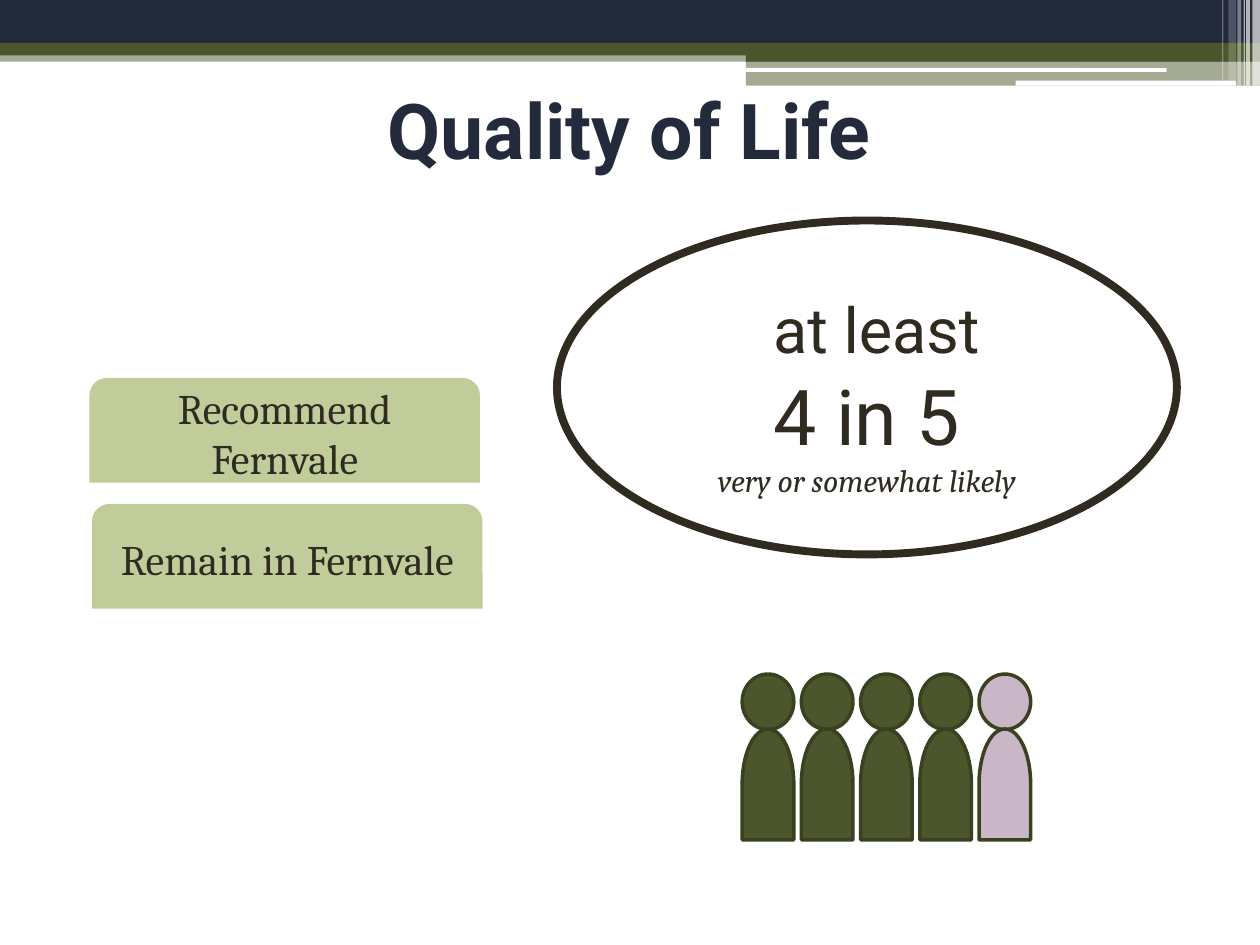
"""Build the Quality of Life slide with its likelihood callout and five-person pictogram."""
from lxml import etree
from pptx import Presentation, util as u
from pptx.dml.color import RGBColor
from pptx.enum import shapes, text
from pptx.oxml import ns

NAVY = RGBColor(0x22, 0x2A, 0x3C)
OLIVE = RGBColor(0x4C, 0x56, 0x2C)
DARK_OLIVE = RGBColor(0x39, 0x41, 0x21)
SAGE = RGBColor(0xC0, 0xCC, 0x9A)
MAUVE = RGBColor(0xC9, 0xB6, 0xC7)
INK = RGBColor(0x2F, 0x2B, 0x20)
WHITE = RGBColor(0xFF, 0xFF, 0xFF)
KIND = shapes.MSO_SHAPE

presentation = Presentation()
presentation.slide_width, presentation.slide_height = u.Inches(10), u.Inches(7.5)
COLUMN = presentation.slide_width / 10
ROW = presentation.slide_height / 7.5
slide = presentation.slides.add_slide(presentation.slide_layouts[5])


def add_figure(parent, kind, left, top, width, height, fill=None, opacity=100, line=None, weight=2):
    shape = parent.shapes.add_shape(
        kind, round(left * COLUMN), round(top * ROW), round(width * COLUMN), round(height * ROW))
    shape.shadow.inherit = False
    if fill is None:
        shape.fill.background()
    else:
        shape.fill.solid()
        shape.fill.fore_color.rgb = fill
        if opacity < 100:
            color = shape.fill._xPr.find(".//" + ns.qn("a:srgbClr"))
            etree.SubElement(color, ns.qn("a:alpha"), val=str(opacity * 1000))
    if line is None:
        shape.line.fill.background()
    else:
        shape.line.color.rgb = line
        shape.line.width = u.Pt(weight)
    return shape


def write(paragraph, words, size, font="Roboto", color=INK, bold=False, italic=False):
    paragraph.alignment = text.PP_ALIGN.CENTER
    run = paragraph.add_run()
    run.text = words
    run.font.size, run.font.name = u.Pt(size), font
    run.font.bold, run.font.italic = bold, italic
    run.font.color.rgb = color


for left, top, width, height, color, opacity in (
    (0, 0.4, 10, 0.09, OLIVE, 50),
    (0, 0, 10, 0.34, NAVY, 100),
    (0, 0.34, 10, 0.1, OLIVE, 100),
    (5.92, 0.39, 4.08, 0.1, OLIVE, 100),
    (5.92, 0.48, 4.08, 0.2, OLIVE, 50),
):
    add_figure(slide, KIND.RECTANGLE, left, top, width, height, color, opacity)

for left, top, width, height in ((5.91, 0.54, 3.35, 0.03), (8.06, 0.64, 1.75, 0.04)):
    add_figure(slide, KIND.ROUNDED_RECTANGLE, left, top, width, height, WHITE)

for left, width, height, opacity in (
    (9.94, 0.06, 0.68, 65),
    (9.89, 0.03, 0.68, 65),
    (9.87, 0.01, 0.68, 60),
    (9.82, 0.03, 0.68, 40),
    (9.75, 0.06, 0.64, 20),
    (9.7, 0.01, 0.64, 30),
):
    add_figure(slide, KIND.RECTANGLE, left, 0, width, height, WHITE, opacity)

callout = add_figure(slide, KIND.OVAL, 4.42, 1.75, 4.92, 2.65, line=INK, weight=4.5)
frame = callout.text_frame
frame.word_wrap = True
frame.vertical_anchor = text.MSO_ANCHOR.MIDDLE
write(frame.paragraphs[0], " ", 44)
write(frame.paragraphs[0], "at least", 36)
write(frame.add_paragraph(), "4 in 5", 44)
write(frame.add_paragraph(), "very or somewhat likely", 18, font="Cambria", italic=True)

title = slide.shapes.title
title.left, title.top = round(0.08 * COLUMN), round(0.48 * ROW)
title.width, title.height = round(9.83 * COLUMN), round(1.08 * ROW)
title.text_frame.vertical_anchor = text.MSO_ANCHOR.MIDDLE
write(title.text_frame.paragraphs[0], "Quality of Life", 44, color=NAVY, bold=True)

for left, top, words in ((0.73, 4, "Remain in Fernvale"), (0.71, 3, "Recommend Fernvale")):
    label = add_figure(slide, KIND.ROUND_2_SAME_RECTANGLE, left, top, 3.1, 0.83, SAGE)
    label.text_frame.word_wrap = True
    label.text_frame.vertical_anchor = text.MSO_ANCHOR.MIDDLE
    write(label.text_frame.paragraphs[0], words, 24, font="Cambria")

PERSON_WIDTH, BODY_HEIGHT, PITCH = 0.41, 0.88, 0.47
for index, color in enumerate([OLIVE] * 4 + [MAUVE]):
    left = 5.89 + index * PITCH
    person = slide.shapes.add_group_shape()
    add_figure(person, KIND.OVAL, left, 5.35, PERSON_WIDTH, 0.44, color, line=DARK_OLIVE)
    body = add_figure(person, KIND.FLOWCHART_DELAY, left + (PERSON_WIDTH - BODY_HEIGHT) / 2, 6.02,
                      BODY_HEIGHT, PERSON_WIDTH, color, line=DARK_OLIVE)
    body.rotation = 270

presentation.save("out.pptx")
